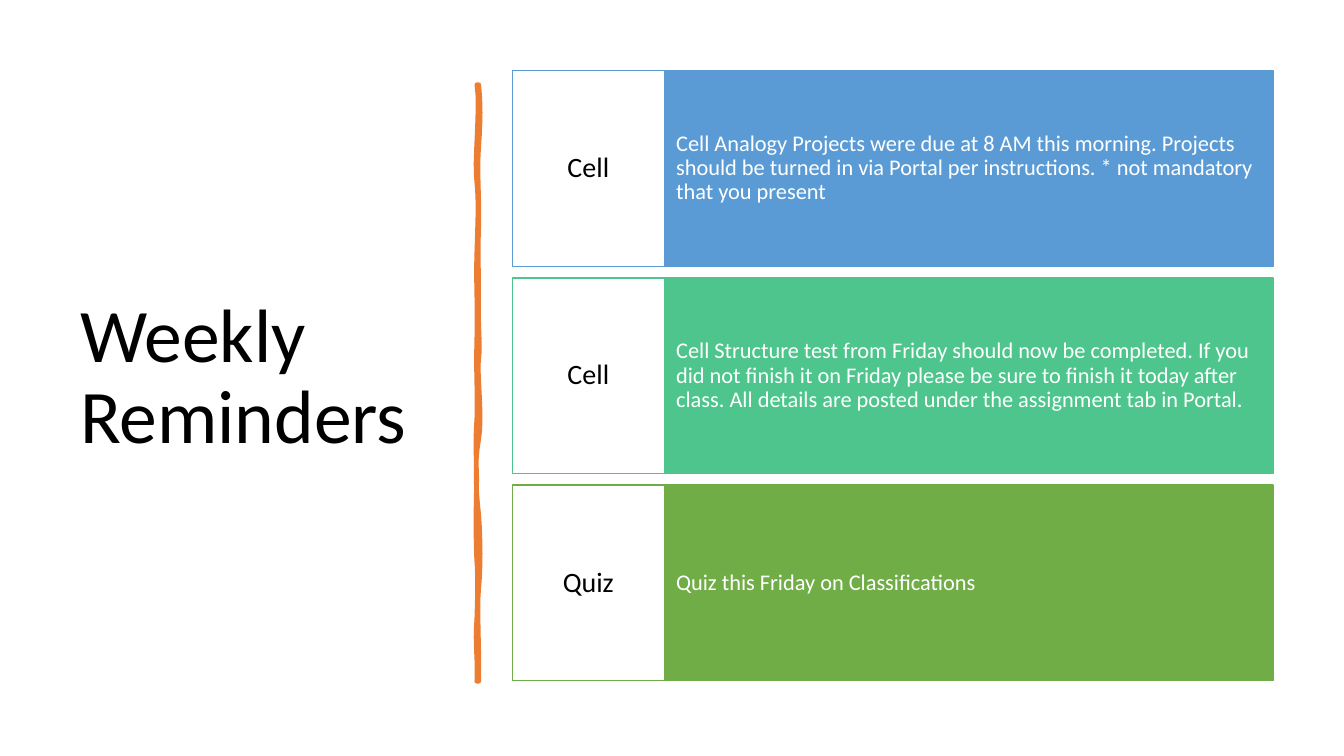
from dataclasses import dataclass

import pptx
import pptx.dml.color
import pptx.enum.shapes
import pptx.enum.text
import pptx.util

Pt = pptx.util.Pt
ALIGN = pptx.enum.text.PP_ALIGN


@dataclass(frozen=True)
class Theme:
    font: str = "Calibri"
    black: str = "000000"
    white: str = "FFFFFF"
    accent: str = "ED7D31"
    cards: tuple = ("5B9BD5", "4DC58D", "70AD47")
    title_size: float = 54
    label_size: float = 20
    body_size: float = 16


REMINDERS = [
    ("Cell", "Cell Analogy Projects were due at 8 AM this morning. Projects should be "
             "turned in via Portal per instructions. * not mandatory that you present"),
    ("Cell", "Cell Structure test from Friday should now be completed. If you did not "
             "finish it on Friday please be sure to finish it today after class. "
             "All details are posted under the assignment tab in Portal."),
    ("Quiz", "Quiz this Friday on Classifications"),
]

CARD_TOP, CARD_HEIGHT, CARD_PITCH = 50.5, 139.8, 148
LABEL_LEFT, LABEL_WIDTH, BODY_WIDTH = 366, 108.5, 434.9

# Each edge of the brush stroke: its x, its first y, then curves of
# (control x, control y, control x, control y, end y).
BRUSH_EDGES = [
    (342, 60.5, [
        (343.4, 73.4, 343.4, 85.7, 105.1),
        (340.6, 124.6, 342.7, 140.4, 162.7),
        (341.3, 185, 342, 188.6, 211.7),
        (341.3, 234, 343.4, 246.2, 256.3),
        (340.6, 266.4, 344.9, 298.1, 313.9),
        (339.1, 329, 339.8, 348.5, 367.2),
        (343.4, 385.9, 343.4, 406.1, 420.5),
        (340.6, 434.2, 342.7, 468, 486.7),
    ]),
    (340.6, 486.7, [
        (341.3, 465.1, 339.1, 463.7, 441.4),
        (341.3, 419.8, 341.3, 410.4, 401),
        (339.8, 391.7, 339.8, 356.4, 343.4),
        (340.6, 330.5, 339.1, 320.4, 298.8),
        (341.3, 277.9, 339.8, 268.6, 241.2),
        (341.3, 214.6, 339.8, 202.3, 180),
        (341.3, 157, 342, 144, 130.3),
        (338.4, 117.4, 343.4, 74.9, 60.5),
    ]),
]


def rgb(color):
    return pptx.dml.color.RGBColor.from_string(color)


def put_text(tf, text, *, font, size, color, align=ALIGN.LEFT, inset=(7.2, 3.6)):
    tf.word_wrap = True
    tf.auto_size = pptx.enum.text.MSO_AUTO_SIZE.NONE
    tf.vertical_anchor = pptx.enum.text.MSO_ANCHOR.MIDDLE
    tf.margin_left = tf.margin_right = Pt(inset[0])
    tf.margin_top = tf.margin_bottom = Pt(inset[1])
    p = tf.paragraphs[0]
    p.alignment = align
    p.line_spacing = 0.9
    r = p.add_run()
    r.text = text
    r.font.name = font
    r.font.size = Pt(size)
    r.font.color.rgb = rgb(color)


def edge_points(x, y, curves, steps=8):
    """Sample the cubic curves of one brush edge."""
    points = [(x, y)]
    for x1, y1, x2, y2, end in curves:
        for i in range(1, steps + 1):
            t = i / steps
            weights = ((1 - t) ** 3, 3 * t * (1 - t) ** 2, 3 * t * t * (1 - t), t ** 3)
            points.append(tuple(sum(w * v for w, v in zip(weights, values))
                                for values in ((x, x1, x2, x), (y, y1, y2, end))))
        y = end
    return points


class SlideBuilder:
    def __init__(self, s, theme):
        self.s = s
        self.theme = theme

    def paint(self, sp, fill, line, width):
        sp.shadow.inherit = False
        sp.fill.solid()
        sp.fill.fore_color.rgb = rgb(fill)
        sp.line.color.rgb = rgb(line)
        sp.line.width = Pt(width)

    def title(self, text, left, top, width, height):
        sp = self.s.shapes.title
        sp.left, sp.top, sp.width, sp.height = map(Pt, (left, top, width, height))
        put_text(sp.text_frame, text, font=self.theme.font,
                 size=self.theme.title_size, color=self.theme.black)

    def brush(self, edges):
        points = [(Pt(x), Pt(y)) for edge in edges for x, y in edge_points(*edge)]
        builder = self.s.shapes.build_freeform(*points[0])
        builder.add_line_segments(points[1:], close=True)
        self.paint(builder.convert_to_shape(), self.theme.accent, self.theme.accent, 3.25)

    def box(self, text, left, top, width, height, *, fill, line, **text_format):
        sp = self.s.shapes.add_shape(pptx.enum.shapes.MSO_SHAPE.RECTANGLE,
                                     Pt(left), Pt(top), Pt(width), Pt(height))
        self.paint(sp, fill, line, 1)
        put_text(sp.text_frame, text, font=self.theme.font, **text_format)

    def card(self, label, body, top, color):
        theme = self.theme
        self.box(body, LABEL_LEFT + LABEL_WIDTH, top, BODY_WIDTH, CARD_HEIGHT,
                 fill=color, line=color, size=theme.body_size, color=theme.white,
                 inset=(8.5, 35.5))
        self.box(label, LABEL_LEFT, top, LABEL_WIDTH, CARD_HEIGHT,
                 fill=theme.white, line=color, size=theme.label_size,
                 color=theme.black, align=ALIGN.CENTER, inset=(5.8, 13.8))


def main():
    prs = pptx.Presentation()
    prs.slide_width, prs.slide_height = Pt(960), Pt(540)
    s = prs.slides.add_slide(prs.slide_layouts.get_by_name("Title Only"))
    theme = Theme()
    slide = SlideBuilder(s, theme)
    slide.title("Weekly Reminders", 50, 50.4, 269, 440)
    slide.brush(BRUSH_EDGES)
    for i, ((label, body), color) in enumerate(zip(REMINDERS, theme.cards)):
        slide.card(label, body, CARD_TOP + i * CARD_PITCH, color)
    prs.save("out.pptx")


if __name__ == "__main__":
    main()
